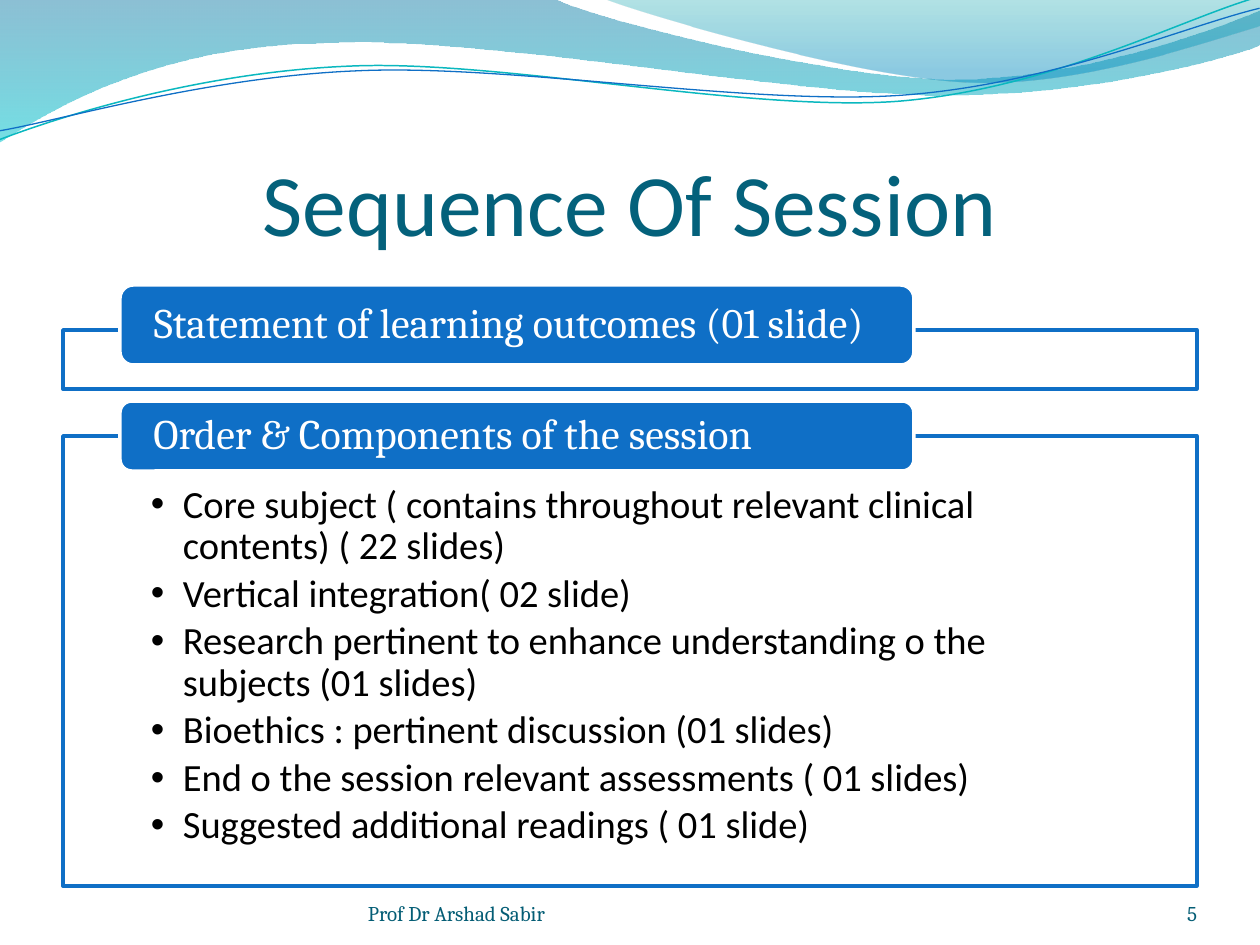
import pptx
import pptx.util
import pptx.dml.color
import pptx.enum.shapes
import pptx.enum.text
import pptx.oxml
import pptx.oxml.ns
import lxml.etree
from dataclasses import dataclass

UNIT = 914400 / 126  # EMU in one px
KIND = pptx.enum.shapes.MSO_SHAPE
SIDE = pptx.enum.text.PP_ALIGN
HOLD = pptx.enum.text.MSO_ANCHOR


@dataclass(frozen=True)
class Theme:
    blue: str = "0F6FC6"
    teal: str = "0AB8BF"
    title: str = "04617B"
    foot: str = "045D75"
    white: str = "FFFFFF"
    black: str = "000000"
    sans: str = "Calibri"
    serif: str = "Cambria"
    big: int = 50
    head: int = 24
    body: int = 22
    small: int = 12
    edge: int = 2


LOOK = Theme()

# Gradient stops: position, colour, opacity in percent
DEEP = [(0, "0074A1", 45), (1, "00C6CF", 55)]
PALE = [(0, "00A1A9", 30), (0.8, "008BBF", 45)]

# Outlines: a pair of numbers is a corner, six numbers are a cubic curve
WAVES = [
    ([(0, 0), (554, -1), (600, 21, 837, 79, 955, 79), (1075, 79, 1207, 33, 1260, 11),
      (1261, 45), (1239, 55, 1096, 96, 940, 95), (784, 95, 481, 35, 324, 43),
      (163, 45, 58, 105, -1, 142)], DEEP),
    ([(604, -1), (640, 14, 859, 78, 969, 82), (1079, 87, 1211, 40, 1260, 26),
      (1260, 0)], PALE),
]
LINES = [
    ([(-3, 110), (58, 90, 199, 52, 350, 53), (499, 53, 745, 118, 896, 114),
      (1049, 109, 1184, 45, 1260, 27)], LOOK.teal, 0.85),
    ([(-2, 101), (57, 94, 207, 57, 357, 58), (509, 58, 750, 112, 902, 108),
      (1052, 104, 1188, 52, 1262, 38)], LOOK.blue, 0.75),
]
TILT = 357.3  # turn of both lines, in degrees

# Sections: heading, tab top and height, box top and height, bullets
PARTS = [
    ("Statement of learning outcomes (01 slide)", (285, 80), (330, 59), []),
    ("Order & Components of the session", (401, 70), (436, 450), [
        "Core subject ( contains throughout relevant clinical contents) ( 22 slides)",
        "Vertical integration( 02 slide)",
        "Research pertinent to enhance understanding o the subjects (01 slides)",
        "Bioethics : pertinent discussion (01 slides)",
        "End o the session relevant assessments ( 01 slides)",
        "Suggested additional readings ( 01 slide)",
    ]),
]


def px(num):
    return pptx.util.Emu(round(num * UNIT))


def rgb(code):
    return pptx.dml.color.RGBColor.from_string(code)


def tag(name):
    return pptx.oxml.ns.qn("a:" + name)


def put(item, **vals):
    for name, val in vals.items():
        setattr(item, name, val)


def fade(color, pct):
    """Set the opacity of each colour found under an element."""
    for node in color.iter(tag("srgbClr")):
        lxml.etree.SubElement(node, tag("alpha")).set("val", str(pct * 1000))


def bend(shape, steps):
    """Join each three line segments of a curved step into one cubic curve."""
    segs = iter(list(shape._element.spPr.iter(tag("lnTo"))))
    for step in steps[1:]:
        trio = [next(segs) for _ in range(len(step) // 2)]
        if len(trio) == 3:
            arc = lxml.etree.Element(tag("cubicBezTo"))
            trio[0].addprevious(arc)
            for seg in trio:
                arc.append(seg[0])
                seg.getparent().remove(seg)


def draw(slide, steps, close):
    dots = [(px(s[i]), px(s[i + 1])) for s in steps for i in range(0, len(s), 2)]
    pen = slide.shapes.build_freeform(*dots[0], scale=1.0)
    pen.add_line_segments(dots[1:], close=close)
    shape = pen.convert_to_shape()
    shape.shadow.inherit = False
    bend(shape, steps)
    return shape


def wave(slide, steps, stops):
    shape = draw(slide, steps, True)
    shape.line.fill.background()
    shape.fill.gradient()
    shape.fill.gradient_angle = 270
    nodes = shape._element.spPr.iter(tag("gs"))
    for stop, node, (pos, code, pct) in zip(shape.fill.gradient_stops, nodes, stops):
        stop.position = pos
        stop.color.rgb = rgb(code)
        fade(node, pct)


def curve(slide, steps, code, width):
    shape = draw(slide, steps, False)
    shape.rotation = TILT
    shape.fill.background()
    shape.line.color.rgb = rgb(code)
    shape.line.width = pptx.util.Pt(width)


def panel(slide, kind, area, fill, edge):
    shape = slide.shapes.add_shape(kind, *map(px, area))
    shape.shadow.inherit = False
    shape.fill.solid()
    shape.fill.fore_color.rgb = rgb(fill)
    shape.line.color.rgb = rgb(edge)
    shape.line.width = pptx.util.Pt(LOOK.edge)
    return shape


def write(shape, rows, font, size, code, anchor, pads=(0, 0, 0, 0), **form):
    frame = shape.text_frame
    names = ("margin_left", "margin_top", "margin_right", "margin_bottom")
    put(frame, word_wrap=True, vertical_anchor=anchor, **dict(zip(names, map(px, pads))))
    for i, row in enumerate(rows):
        para = frame.paragraphs[0] if i == 0 else frame.add_paragraph()
        put(para, **{"alignment": SIDE.LEFT, **form})
        run = para.add_run()
        run.text = row
        put(run.font, name=font, size=pptx.util.Pt(size))
        run.font.color.rgb = rgb(code)


def dot(para):
    """Give a paragraph a bullet with a hanging indent."""
    props = para._p.get_or_add_pPr()
    props.set("marL", str(px(32)))
    props.set("indent", str(px(-32)))
    for name, key, val in (("buFont", "typeface", "Arial"), ("buChar", "char", "•")):
        lxml.etree.SubElement(props, tag(name)).set(key, val)


def label(slide, area, text, *style, **form):
    box = slide.shapes.add_textbox(*map(px, area))
    write(box, [text], *style, **form)


def part(slide, head, tab, box, rows):
    # Outlined box with its bullets
    back = panel(slide, KIND.RECTANGLE, (63, box[0], 1134, box[1]), LOOK.white, LOOK.blue)
    fade(back._element.spPr.find(tag("solidFill")), 90)
    if rows:
        write(back, rows, LOOK.sans, LOOK.body, LOOK.black, HOLD.TOP, (88, 49, 88, 21),
              line_spacing=0.9, space_after=pptx.util.Pt(3.4))
        for para in back.text_frame.paragraphs:
            dot(para)
    # Heading tab over the top edge
    front = panel(slide, KIND.ROUNDED_RECTANGLE, (120, tab[0], 794, tab[1]),
                  LOOK.blue, LOOK.white)
    write(front, [head], LOOK.serif, LOOK.head, LOOK.white, HOLD.MIDDLE,
          (30, 0, 30, 0), line_spacing=0.9)


def main():
    deck = pptx.Presentation()
    put(deck, slide_width=px(1260), slide_height=px(945))
    slide = deck.slides.add_slide(deck.slide_layouts[6])

    # Wavy header
    for item in WAVES:
        wave(slide, *item)
    for item in LINES:
        curve(slide, *item)

    # Title and sections
    label(slide, (63, 97, 1134, 157), "Sequence Of Session", LOOK.sans, LOOK.big,
          LOOK.title, HOLD.BOTTOM, (0, 6, 0, 0), alignment=SIDE.CENTER)
    for item in PARTS:
        part(slide, *item)

    # Footer
    style = (LOOK.serif, LOOK.small, LOOK.foot, HOLD.BOTTOM)
    label(slide, (368, 876, 462, 50), "Prof Dr Arshad Sabir", *style)
    label(slide, (1092, 876, 105, 50), "5", *style, alignment=SIDE.RIGHT)

    deck.save("out.pptx")


if __name__ == "__main__":
    main()
